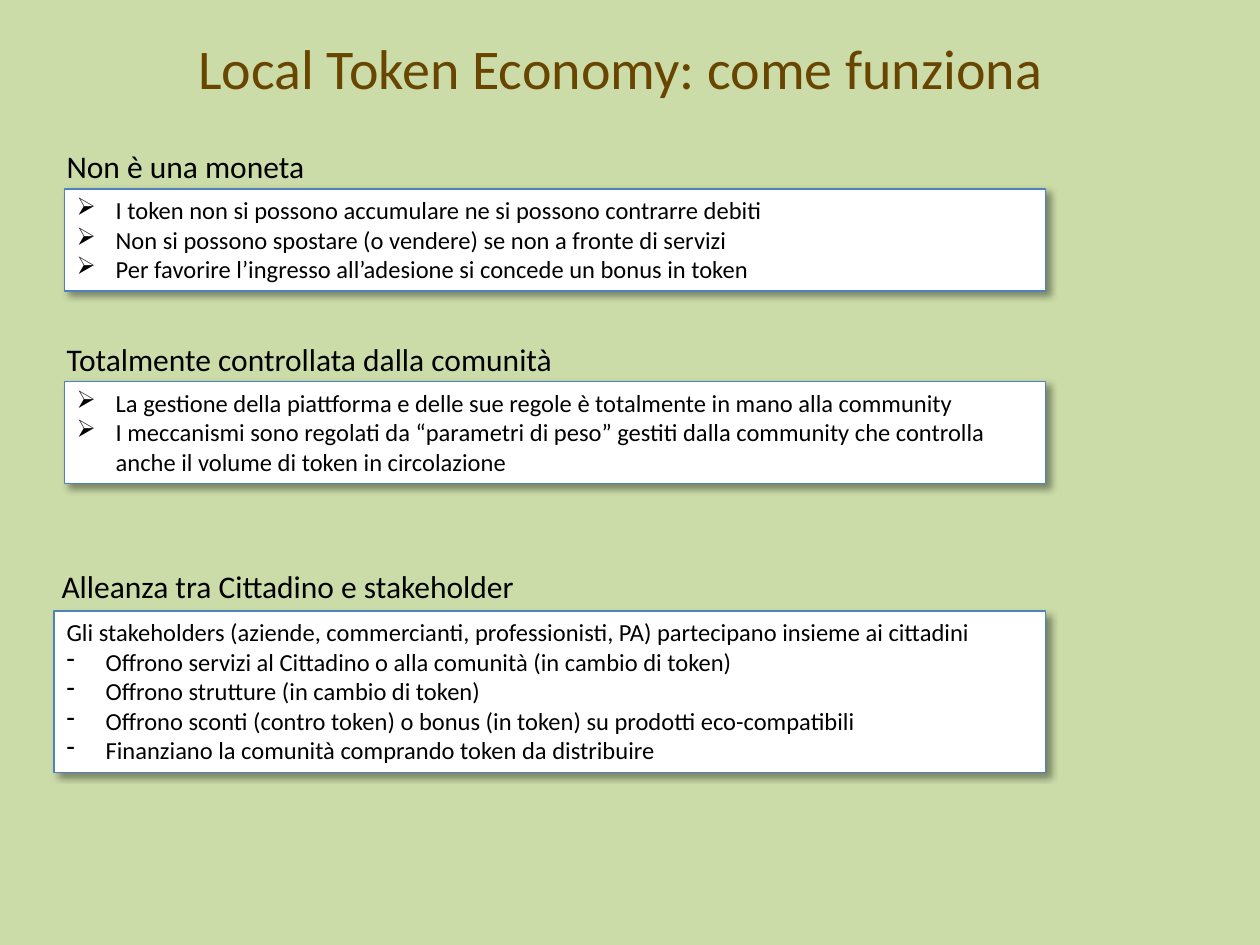
"""Build the slide on how a local token economy works."""
from lxml.etree import SubElement as Sub
from pptx import Presentation
from pptx.dml.color import RGBColor as RGB
from pptx.enum.shapes import MSO_SHAPE as Shape
from pptx.enum.text import MSO_ANCHOR as Anchor, MSO_AUTO_SIZE as Fit, PP_ALIGN as Align
from pptx.oxml.ns import qn
from pptx.util import Inches, Pt

HEX = {"back": "CBDCA8", "title": "684500", "text": "000000", "box": "FFFFFF", "edge": "4F81BD"}
FONT = "Calibri"
TITLE = "Local Token Economy: come funziona"
RIGHT = 8.3
PARTS = [
    {
        "head": "Non è una moneta", "spot": (0.43, 1.12, 2.11, 0.4),
        "box": (0.51, 1.5, 0.81), "mark": "➢", "intro": [],
        "items": [
            "I token non si possono accumulare ne si possono contrarre debiti",
            "Non si possono spostare (o vendere) se non a fronte di servizi",
            "Per favorire l’ingresso all’adesione si concede un bonus in token",
        ],
    },
    {
        "head": "Totalmente controllata dalla comunità", "spot": (0.43, 2.65, 4.16, 0.4),
        "box": (0.51, 3.03, 0.81), "mark": "➢", "intro": [],
        "items": [
            "La gestione della piattforma e delle sue regole è totalmente in mano alla community",
            "I meccanismi sono regolati da “parametri di peso” gestiti dalla community "
            "che controlla anche il volume di token in circolazione",
        ],
    },
    {
        "head": "Alleanza tra Cittadino e stakeholder", "spot": (0.39, 4.45, 3.84, 0.4),
        "box": (0.43, 4.85, 1.28), "mark": "-",
        "intro": ["Gli stakeholders (aziende, commercianti, professionisti, PA) "
                  "partecipano insieme ai cittadini"],
        "items": [
            "Offrono servizi al Cittadino o alla comunità (in cambio di token)",
            "Offrono strutture (in cambio di token)",
            "Offrono sconti (contro token) o bonus (in token) su prodotti eco-compatibili",
            "Finanziano la comunità comprando token da distribuire",
        ],
    },
]


def color(name):
    return RGB.from_string(HEX[name])


def write(para, text, size, tone="text"):
    run = para.add_run()
    run.text = text
    run.font.size = Pt(size)
    run.font.name = FONT
    run.font.color.rgb = color(tone)
    return run


def shade(effects):
    shadow = Sub(effects, qn("a:outerShdw"), blurRad=str(Pt(4)), dist=str(Pt(3)),
                 dir=str(45 * 60000), algn="tl", rotWithShape="0")
    tone = Sub(shadow, qn("a:srgbClr"), val=HEX["text"])
    Sub(tone, qn("a:alpha"), val="40000")


def bullet(para, mark):
    props = para._p.get_or_add_pPr()
    props.set("marL", str(Inches(0.31)))
    props.set("indent", str(-Inches(0.31)))
    Sub(props, qn("a:buChar"), char=mark)


def add_title(slide):
    title = slide.shapes.title
    title.left, title.top, title.width, title.height = map(Inches, (0.36, 0.23, 9.13, 0.61))
    frame = title.text_frame
    frame.auto_size = Fit.NONE
    frame.vertical_anchor = Anchor.MIDDLE
    frame.margin_left = frame.margin_right = Inches(0.07)
    frame.margin_top = frame.margin_bottom = Inches(0.04)
    para = frame.paragraphs[0]
    para.alignment = Align.CENTER
    props = write(para, TITLE, 32, "title").font._element
    effects = Sub(props, qn("a:effectLst"))
    props.find(qn("a:solidFill")).addnext(effects)
    shade(effects)


def add_box(slide, part):
    left, top, high = part["box"]
    box = slide.shapes.add_shape(Shape.RECTANGLE, *map(Inches, (left, top, RIGHT - left, high)))
    box.fill.solid()
    box.fill.fore_color.rgb = color("box")
    box.line.color.rgb = color("edge")
    box.line.width = Pt(0.75)
    box.shadow.inherit = False
    shade(box._element.spPr.find(qn("a:effectLst")))
    frame = box.text_frame
    frame.word_wrap = True
    frame.vertical_anchor = Anchor.TOP
    for row, text in enumerate(part["intro"] + part["items"]):
        para = frame.add_paragraph() if row else frame.paragraphs[0]
        para.alignment = Align.LEFT
        if text in part["items"]:
            bullet(para, part["mark"])
        write(para, text, 14)


def add_head(slide, part):
    frame = slide.shapes.add_textbox(*map(Inches, part["spot"])).text_frame
    frame.word_wrap = False
    write(frame.paragraphs[0], part["head"], 18)


def main():
    deck = Presentation()
    deck.slide_width, deck.slide_height = Inches(10), Inches(7.5)
    slide = deck.slides.add_slide(deck.slide_layouts[5])
    slide.background.fill.solid()
    slide.background.fill.fore_color.rgb = color("back")
    add_title(slide)
    for part in PARTS:
        add_box(slide, part)
        add_head(slide, part)
    deck.save("out.pptx")


if __name__ == "__main__":
    main()
